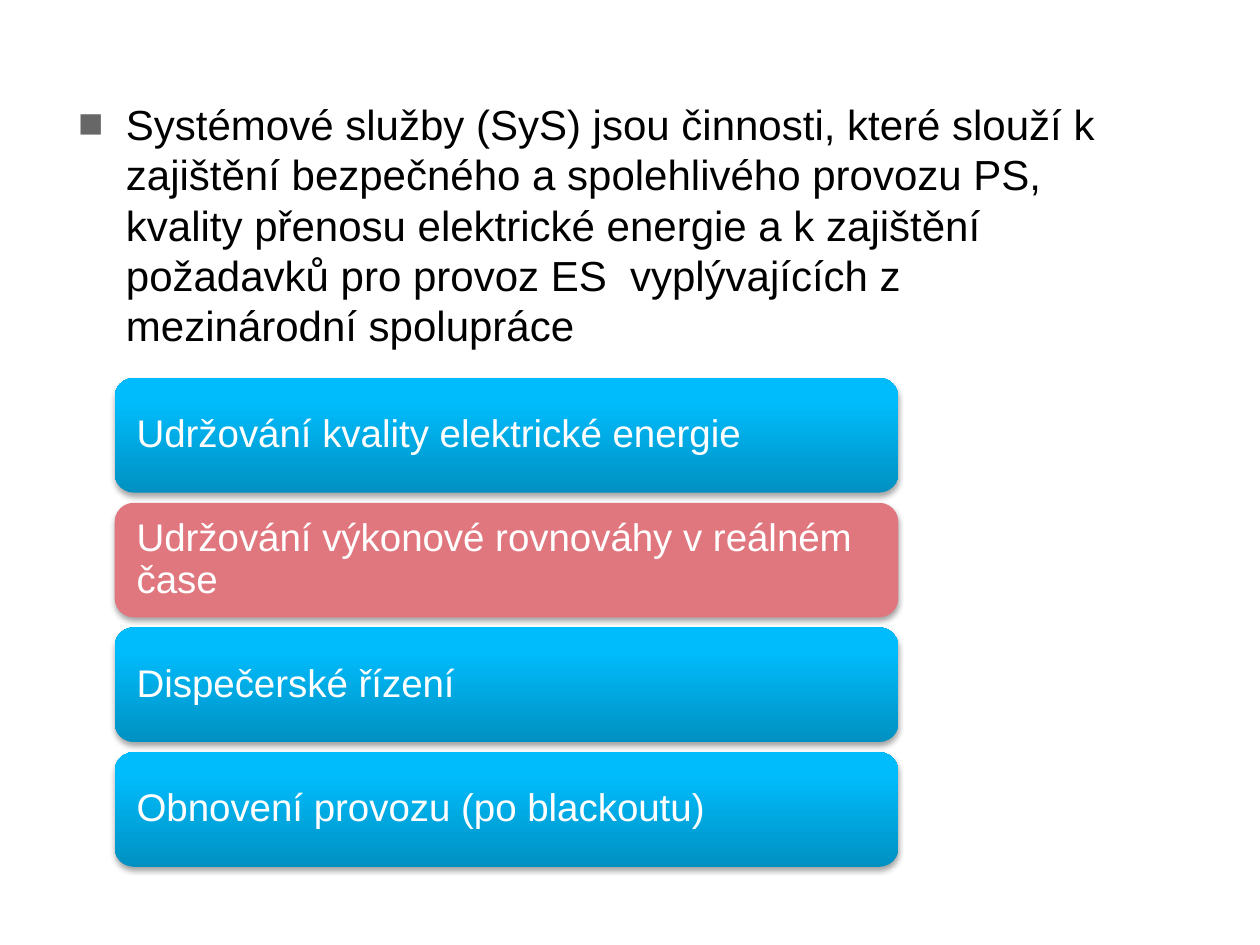
from lxml import etree
from pptx import Presentation, util as u
from pptx.dml.color import RGBColor
from pptx.enum import shapes, text
from pptx.oxml import parse_xml
from pptx.oxml.ns import nsdecls, qn

BLACK = RGBColor(0x00, 0x00, 0x00)
WHITE = RGBColor(0xFF, 0xFF, 0xFF)
GREY = RGBColor(0x67, 0x67, 0x67)
ROSE = RGBColor(0xE1, 0x77, 0x7E)
BLUES = [(0, RGBColor(0x00, 0x91, 0xC2)),
         (80, RGBColor(0x00, 0xBC, 0xFC)),
         (100, RGBColor(0x00, 0xBD, 0xFD))]

DEFINITION = ("Systémové služby (SyS) jsou činnosti, které slouží k zajištění "
              "bezpečného a spolehlivého provozu PS, kvality přenosu elektrické "
              "energie a k zajištění požadavků pro provoz ES  vyplývajících z "
              "mezinárodní spolupráce")
SERVICES = [("Udržování kvality elektrické energie", False),
            ("Udržování výkonové rovnováhy v reálném čase", True),
            ("Dispečerské řízení", False),
            ("Obnovení provozu (po blackoutu)", False)]

BAR_LEFT, BAR_TOP = u.Inches(0.91), u.Inches(3)
BAR_WIDTH, BAR_HEIGHT = u.Inches(6.22), u.Inches(0.91)
BAR_PITCH = u.Inches(0.99)


def style_text(paragraph, size, color, space_after):
    paragraph.space_after = u.Pt(space_after)
    for run in paragraph.runs:
        run.font.name = "Arial"
        run.font.size = u.Pt(size)
        run.font.color.rgb = color


prs = Presentation()
prs.slide_width, prs.slide_height = u.Inches(10), u.Inches(7.5)
slide = prs.slides.add_slide(prs.slide_layouts[6])

# Definition with a square bullet
definition = slide.shapes.add_textbox(u.Inches(0.62), u.Inches(0.78),
                                      u.Inches(8.43), u.Inches(2.02))
frame = definition.text_frame
frame.word_wrap = True
frame.margin_left = frame.margin_right = frame.margin_top = frame.margin_bottom = 0
frame.text = DEFINITION
paragraph = frame.paragraphs[0]
props = paragraph._p.get_or_add_pPr()
props.set("marL", str(u.Inches(0.38)))
props.set("indent", str(-u.Inches(0.38)))
bullet_color = etree.SubElement(props, qn("a:buClr"))
etree.SubElement(bullet_color, qn("a:srgbClr"), val=str(GREY))
etree.SubElement(props, qn("a:buFont"), typeface="Arial")
etree.SubElement(props, qn("a:buChar"), char="■")
style_text(paragraph, 24, BLACK, 3)

# One bar per service, the highlighted one in rose
stops = "".join(f'<a:gs pos="{share * 1000}"><a:srgbClr val="{color}"/></a:gs>'
                for share, color in BLUES)
gradient = (f'<a:gradFill {nsdecls("a")} rotWithShape="1"><a:gsLst>{stops}</a:gsLst>'
            '<a:lin ang="16200000" scaled="0"/></a:gradFill>')
shadow = (f'<a:outerShdw {nsdecls("a")} blurRad="{u.Pt(3.1)}" dist="{u.Pt(1.8)}" '
          'dir="5400000" rotWithShape="0"><a:srgbClr val="000000">'
          '<a:alpha val="35000"/></a:srgbClr></a:outerShdw>')

for row, (service, highlighted) in enumerate(SERVICES):
    bar = slide.shapes.add_shape(shapes.MSO_SHAPE.ROUNDED_RECTANGLE, BAR_LEFT,
                                 BAR_TOP + row * BAR_PITCH, BAR_WIDTH, BAR_HEIGHT)
    bar.line.fill.background()
    bar.shadow.inherit = False
    bar_props = bar._element.spPr
    bar_props.find(qn("a:effectLst")).append(parse_xml(shadow))
    if highlighted:
        bar.fill.solid()
        bar.fill.fore_color.rgb = ROSE
    else:
        bar_props.find(qn("a:prstGeom")).addnext(parse_xml(gradient))

    frame = bar.text_frame
    frame.word_wrap = True
    frame.vertical_anchor = text.MSO_ANCHOR.MIDDLE
    frame.margin_left = frame.margin_right = u.Inches(0.13)
    frame.margin_top = frame.margin_bottom = u.Inches(0.09)
    frame.text = service
    label = frame.paragraphs[0]
    label.alignment = text.PP_ALIGN.LEFT
    label.line_spacing = 0.9
    style_text(label, 22, WHITE, 0)

prs.save("out.pptx")
